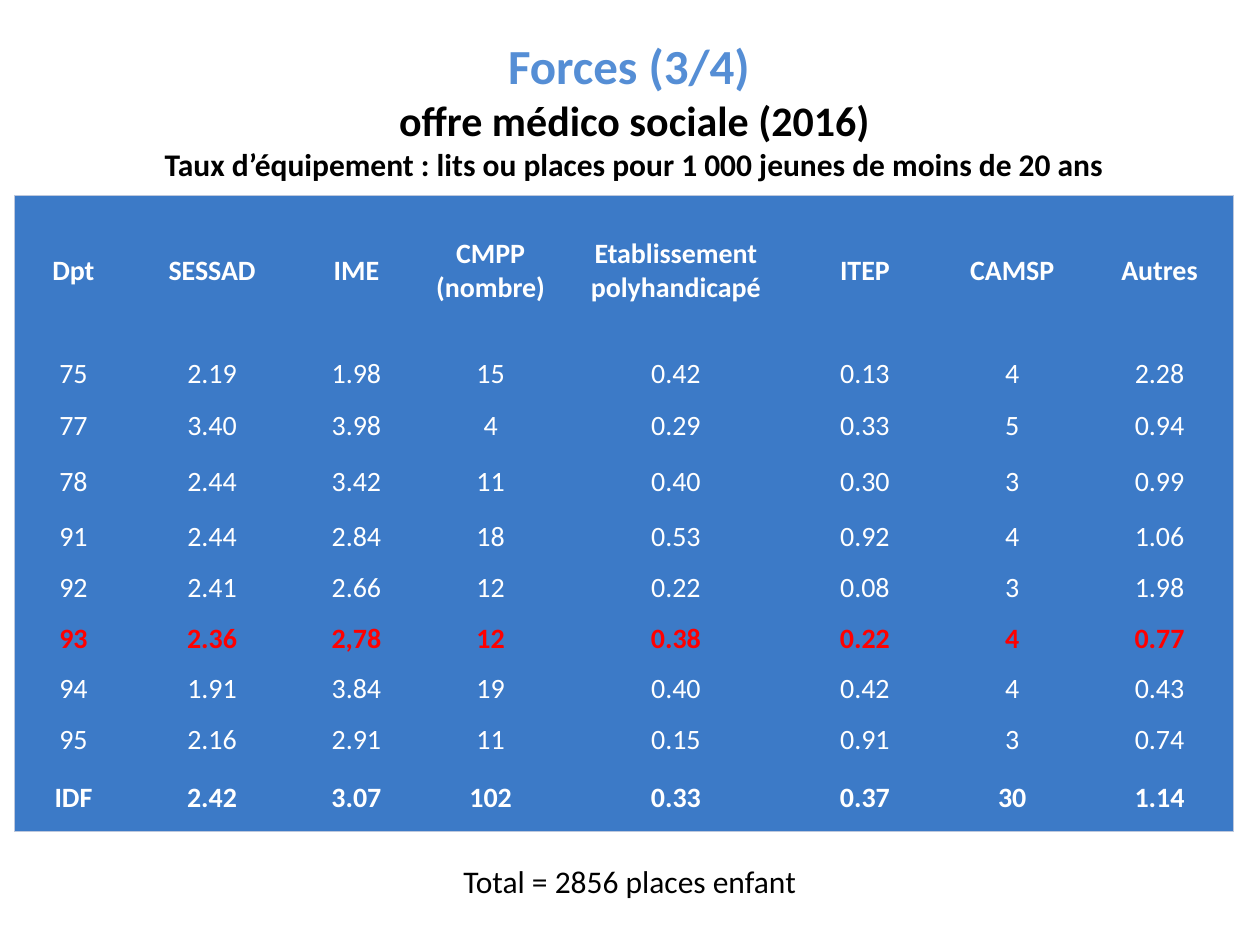
"""Build the slide on medico-social equipment rates by department."""
from lxml.etree import SubElement
from pptx import Presentation
from pptx.dml.color import RGBColor
from pptx.enum.text import MSO_ANCHOR, PP_ALIGN
from pptx.oxml.ns import qn
from pptx.util import Cm, Pt


def color(value):
    return RGBColor.from_string(value)


def write(paragraph, text, size=16, fill="000000", bold=False, align=PP_ALIGN.CENTER):
    paragraph.alignment = align
    run = paragraph.add_run()
    run.text = text
    run.font.name = "Calibri"
    run.font.size = Pt(size)
    run.font.bold = bold
    run.font.color.rgb = color(fill)


presentation = Presentation()
presentation.slide_width = Cm(25.4)
presentation.slide_height = Cm(19.05)
slide = presentation.slides.add_slide(presentation.slide_layouts[6])

title = slide.shapes.add_textbox(Cm(0.89), Cm(1.52), Cm(23.8), Cm(2.29))
title.text_frame.word_wrap = True
title.text_frame.vertical_anchor = MSO_ANCHOR.BOTTOM
heading = title.text_frame.paragraphs[0]
write(heading, "Forces (3/4) ", size=28, fill="558ED5", bold=True)
heading.add_line_break()
write(heading, "offre médico sociale (2016)", size=24, bold=True)
heading.add_line_break()
write(heading, "Taux d’équipement : lits ou places pour 1 000 jeunes de moins de 20 ans",
      size=18, bold=True)

rates = [
    ["Dpt", "SESSAD", "IME", "CMPP (nombre)", "Etablissement polyhandicapé", "ITEP", "CAMSP", "Autres"],
    ["75", "2.19", "1.98", "15", "0.42", "0.13", "4", "2.28"],
    ["77", "3.40", "3.98", "4", "0.29", "0.33", "5", "0.94"],
    ["78", "2.44", "3.42", "11", "0.40", "0.30", "3", "0.99"],
    ["91", "2.44", "2.84", "18", "0.53", "0.92", "4", "1.06"],
    ["92", "2.41", "2.66", "12", "0.22", "0.08", "3", "1.98"],
    ["93", "2.36", "2,78", "12", "0.38", "0.22", "4", "0.77"],
    ["94", "1.91", "3.84", "19", "0.40", "0.42", "4", "0.43"],
    ["95", "2.16", "2.91", "11", "0.15", "0.91", "3", "0.74"],
    ["IDF", "2.42", "3.07", "102", "0.33", "0.37", "30", "1.14"],
]
column_widths = [2.36, 3.23, 2.59, 2.82, 4.65, 2.97, 2.97, 2.97]
row_heights = [3.05, 1.09, 1.02, 1.22, 1.02, 1.02, 1.02, 1.02, 1.02, 1.35]
last_row, last_column = len(rates) - 1, len(column_widths) - 1

table = slide.shapes.add_table(len(rates), len(column_widths), Cm(0.3), Cm(3.94),
                               Cm(sum(column_widths)), Cm(sum(row_heights))).table
table.horz_banding = False
for column, width in zip(table.columns, column_widths):
    column.width = Cm(width)

for row_index, values in enumerate(rates):
    table.rows[row_index].height = Cm(row_heights[row_index])
    highlighted = values[0] == "93"
    for column_index, value in enumerate(values):
        cell = table.cell(row_index, column_index)
        cell.margin_left = cell.margin_right = cell.margin_top = cell.margin_bottom = 0
        cell.vertical_anchor = MSO_ANCHOR.MIDDLE
        write(cell.text_frame.paragraphs[0], value,
              fill="FF0000" if highlighted else "FFFFFF",
              bold=highlighted or row_index in (0, last_row))
        outer_sides = {
            "a:lnL": column_index == 0,
            "a:lnR": column_index == last_column,
            "a:lnT": row_index == 0,
            "a:lnB": row_index == last_row,
        }
        properties = cell._tc.get_or_add_tcPr()
        for side, outer in outer_sides.items():
            border = SubElement(properties, qn(side), w=str(Pt(0.75)))
            if outer:
                SubElement(SubElement(border, qn("a:solidFill")), qn("a:srgbClr"), val="BDC8DD")
            else:
                SubElement(border, qn("a:noFill"))
        cell.fill.solid()
        cell.fill.fore_color.rgb = color("3C7AC7")

total = slide.shapes.add_textbox(Cm(9.09), Cm(17.25), Cm(7.29), Cm(1.02))
total.text_frame.word_wrap = False
write(total.text_frame.paragraphs[0], "Total = 2856 places enfant", size=18, align=PP_ALIGN.LEFT)

presentation.save("out.pptx")
